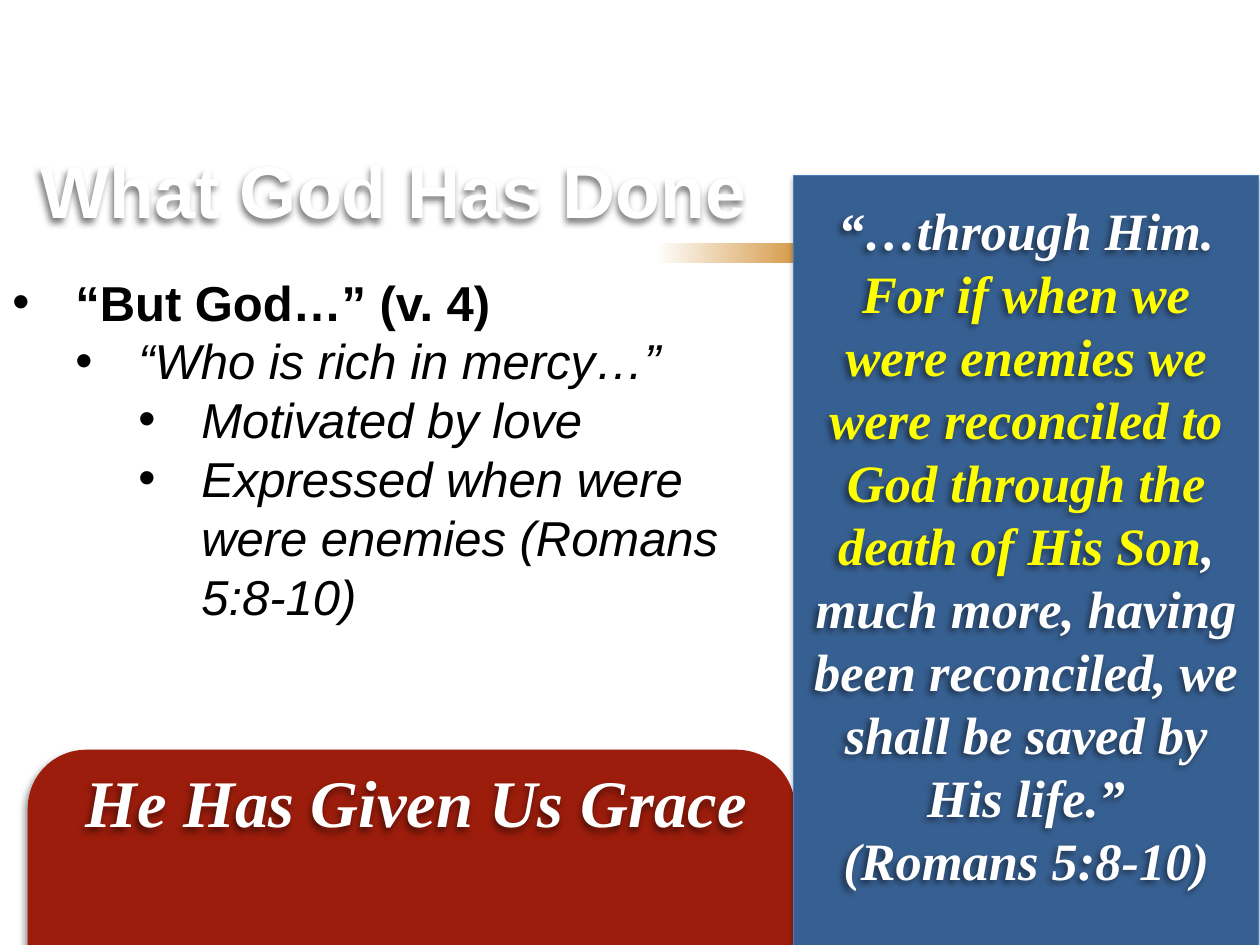
"""Build the "What God Has Done" slide with its outline, banner and verse panel."""
import pptx
import pptx.dml.color
import pptx.enum.shapes
import pptx.enum.text
import pptx.oxml
import pptx.oxml.ns
import pptx.util

Inches = pptx.util.Inches
Pt = pptx.util.Pt
RGBColor = pptx.dml.color.RGBColor
SHAPES = pptx.enum.shapes.MSO_SHAPE
CENTER = pptx.enum.text.PP_ALIGN.CENTER

WHITE = RGBColor(0xFF, 0xFF, 0xFF)
BLACK = RGBColor(0x00, 0x00, 0x00)
YELLOW = RGBColor(0xFF, 0xFF, 0x00)
GOLD = RGBColor(0xCF, 0x8A, 0x2B)
RED = RGBColor(0x9D, 0x1D, 0x0C)
BLUE = RGBColor(0x37, 0x60, 0x92)
EDGE_BLUE = RGBColor(0x4B, 0x7E, 0xBC)

OUTLINE = [
    (0, "“But God…” (v. 4)"),
    (1, "“Who is rich in mercy…”"),
    (2, "Motivated by love"),
    (2, "Expressed when were were enemies (Romans 5:8-10)"),
]
VERSE = [
    [
        ("“…through Him. ", WHITE),
        ("For if when we were enemies we were reconciled to God "
         "through the death of His Son", YELLOW),
        (", much more, having been reconciled, we shall be saved by His life.”", WHITE),
    ],
    [("(Romans 5:8-10)", WHITE)],
]


def add_shadow(target, alpha, blur, distance, angle):
    """Give a shape, or the text of an unfilled box, a soft black shadow."""
    target.shadow.inherit = False
    effects = target._element.spPr.find(pptx.oxml.ns.qn("a:effectLst"))
    effects.append(pptx.oxml.parse_xml(
        f'<a:outerShdw {pptx.oxml.ns.nsdecls("a")} blurRad="{Pt(blur)}" '
        f'dist="{Pt(distance)}" dir="{angle * 60000}" algn="ctr" rotWithShape="0">'
        f'<a:srgbClr val="000000"><a:alpha val="{alpha * 1000}"/></a:srgbClr>'
        '</a:outerShdw>'))


def add_panel(slide, kind, left, top, width, height, color=None):
    """Add a borderless preset shape, filled if a colour is given."""
    panel = slide.shapes.add_shape(
        kind, Inches(left), Inches(top), Inches(width), Inches(height))
    panel.shadow.inherit = False
    panel.line.fill.background()
    if color is not None:
        panel.fill.solid()
        panel.fill.fore_color.rgb = color
    return panel


def add_text(slide, left, top, width, height, wrap=True):
    """Add an empty text box."""
    box = slide.shapes.add_textbox(
        Inches(left), Inches(top), Inches(width), Inches(height))
    box.text_frame.word_wrap = wrap
    return box


def format_run(run, size, name, color, bold=False, italic=False):
    """Set the font of one run."""
    run.font.size = Pt(size)
    run.font.name = name
    run.font.bold = bold
    run.font.italic = italic
    run.font.color.rgb = color


def add_bullet(paragraph, level):
    """Give a paragraph a round bullet with a half-inch hanging indent per level."""
    properties = paragraph._p.get_or_add_pPr()
    properties.set("marL", str(Inches(0.5 * (level + 1))))
    properties.set("indent", str(Inches(-0.5)))
    declaration = pptx.oxml.ns.nsdecls("a")
    properties.append(pptx.oxml.parse_xml(f'<a:buFont {declaration} typeface="Arial"/>'))
    properties.append(pptx.oxml.parse_xml(f'<a:buChar {declaration} char="•"/>'))
    paragraph.level = level


def add_title(slide):
    """Add the heading and the fading gold rule below it."""
    title = add_text(slide, 0.22, 1.1, 5.86, 0.81, wrap=False)
    title.text_frame.text = "What God Has Done"
    format_run(title.text_frame.paragraphs[0].runs[0], 42, "Arial", WHITE, bold=True)
    add_shadow(title, 50, 4, 3, 135)

    rule = add_panel(slide, SHAPES.RECTANGLE, 0, 1.93, 6.5, 0.15)
    rule.fill.gradient()
    rule.fill.gradient_angle = 356
    stops = rule.fill.gradient_stops
    for stop, position, color in zip(stops, (0.8, 1), (WHITE, GOLD)):
        stop.position = position
        stop.color.rgb = color


def add_banner(slide):
    """Add the red banner with its conclusion."""
    banner = add_panel(slide, SHAPES.ROUNDED_RECTANGLE, 0.22, 5.95, 6.09, 2.79, RED)
    add_shadow(banner, 40, 4, 3, 135)
    conclusion = add_text(slide, 0.53, 5.99, 5.55, 0.74)
    conclusion.text_frame.text = "He Has Given Us Grace"
    paragraph = conclusion.text_frame.paragraphs[0]
    paragraph.alignment = CENTER
    format_run(paragraph.runs[0], 38, "Times New Roman", WHITE, bold=True, italic=True)
    add_shadow(conclusion, 50, 4, 3, 135)


def add_outline(slide):
    """Add the bulleted outline."""
    frame = add_text(slide, 0, 2.11, 6.3, 3.4).text_frame
    frame.text = "\n".join(text for _, text in OUTLINE)
    for paragraph, (level, _) in zip(frame.paragraphs, OUTLINE):
        add_bullet(paragraph, level)
        format_run(paragraph.runs[0], 28, "Arial", BLACK,
                   bold=level == 0, italic=level > 0)


def add_verse(slide):
    """Add the blue panel with the quoted verse."""
    panel = add_panel(slide, SHAPES.RECTANGLE, 6.3, 1.39, 3.69, 6.12, BLUE)
    panel.line.color.rgb = EDGE_BLUE
    panel.line.width = Pt(0.75)
    add_shadow(panel, 35, 3.1, 1.8, 90)
    quote = add_text(slide, 6.3, 1.52, 3.69, 5.65)
    frame = quote.text_frame
    for index, parts in enumerate(VERSE):
        paragraph = frame.add_paragraph() if index else frame.paragraphs[0]
        paragraph.alignment = CENTER
        for text, color in parts:
            run = paragraph.add_run()
            run.text = text
            format_run(run, 30, "Times New Roman", color, bold=True, italic=True)
    add_shadow(quote, 50, 4, 3, 135)


def main():
    """Assemble and save the slide."""
    deck = pptx.Presentation()
    deck.slide_width = Inches(10)
    deck.slide_height = Inches(7.5)
    slide = deck.slides.add_slide(deck.slide_layouts[6])
    add_title(slide)
    add_banner(slide)
    add_outline(slide)
    add_verse(slide)
    deck.save("out.pptx")


if __name__ == "__main__":
    main()
